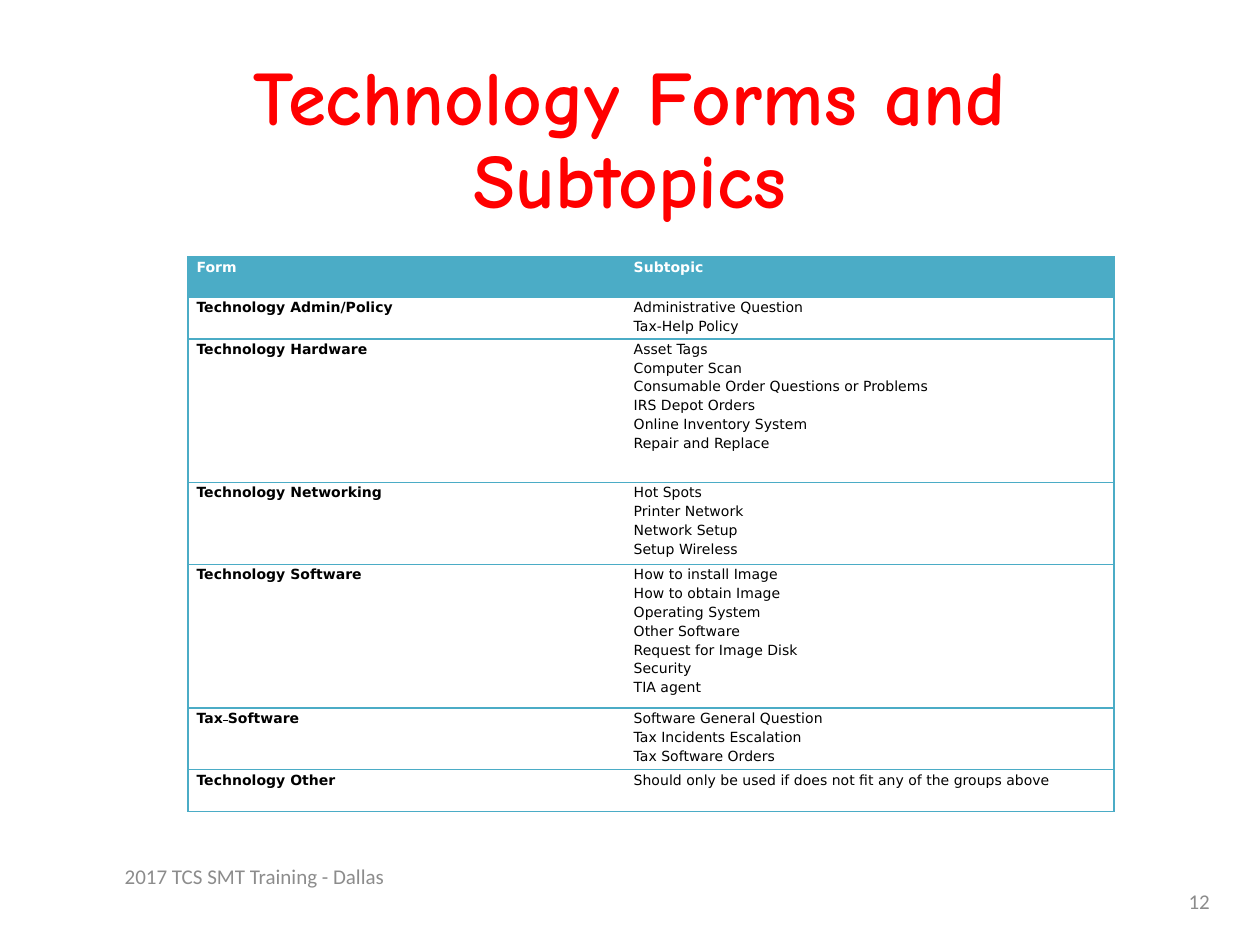
from lxml.etree import SubElement
from pptx import Presentation
from pptx.dml.color import RGBColor
from pptx.enum.text import MSO_ANCHOR, MSO_AUTO_SIZE, PP_ALIGN
from pptx.oxml.ns import qn
from pptx.util import Inches, Pt

THEME = {
    "accent": "4BACC6",
    "title": {"name": "Comic Neue", "size": Pt(44), "bold": True, "color": "FF0000"},
    "header": {"name": "DejaVu Sans", "size": Pt(8), "bold": True, "color": "FFFFFF"},
    "form": {"name": "DejaVu Sans", "size": Pt(8), "bold": True, "color": "000000"},
    "subtopic": {"name": "DejaVu Sans", "size": Pt(8), "bold": False, "color": "000000"},
    "footer": {"name": "Calibri", "size": Pt(12), "bold": False, "color": "8C8C8C"},
}
NO_STYLE_NO_GRID = "{2D5ABB26-0587-4C30-8999-92F81FD0307C}"

# Row height, form name in runs, subtopics
ROWS = [
    (0.32, ["Form"], ["Subtopic"]),
    (0.33, ["Technology Admin/Policy"], ["Administrative Question", "Tax-Help Policy"]),
    (1.14, ["Technology Hardware"],
     ["Asset Tags", "Computer Scan", "Consumable Order Questions or Problems",
      "IRS Depot Orders", "Online Inventory System", "Repair and Replace"]),
    (0.65, ["Technology Networking"],
     ["Hot Spots", "Printer Network", "Network Setup", "Setup Wireless"]),
    (1.14, ["Technology Software"],
     ["How to install Image", "How to obtain Image", "Operating System",
      "Other Software", "Request for Image Disk", "Security", "TIA agent"]),
    (0.49, ["Tax", " ", "Software"],
     ["Software General Question", "Tax Incidents Escalation", "Tax Software Orders"]),
    (0.33, ["Technology Other"],
     ["Should only be used if does not fit any of the groups above"]),
]


def add_run(paragraph, text, role):
    run = paragraph.add_run()
    run.text = text
    for key, value in THEME[role].items():
        if key == "color":
            run.font.color.rgb = RGBColor.from_string(value)
        else:
            setattr(run.font, key, value)
    return run


def add_border(cell, side):
    line = SubElement(cell._tc.get_or_add_tcPr(), qn(f"a:ln{side}"), w=str(Pt(1)))
    fill = SubElement(line, qn("a:solidFill"))
    SubElement(fill, qn("a:srgbClr"), val=THEME["accent"])


prs = Presentation()
prs.slide_width, prs.slide_height = Inches(10), Inches(7.5)
slide = prs.slides.add_slide(prs.slide_layouts[5])

# Title
title = slide.shapes.title
title.left, title.top = Inches(0.69), Inches(0.4)
title.width, title.height = Inches(8.62), Inches(1.45)
title_frame = title.text_frame
title_format = {
    "word_wrap": True, "auto_size": MSO_AUTO_SIZE.NONE,
    "vertical_anchor": MSO_ANCHOR.MIDDLE,
    "margin_left": Inches(0.05), "margin_right": Inches(0.05),
    "margin_top": Inches(0.05), "margin_bottom": Inches(0.05),
}
for key, value in title_format.items():
    setattr(title_frame, key, value)
heading = title_frame.paragraphs[0]
heading.alignment, heading.line_spacing = PP_ALIGN.CENTER, 0.9
add_run(heading, "Technology Forms and Subtopics", "title")

# Table of forms
forms = slide.shapes.add_table(len(ROWS), 2, Inches(1.49), Inches(2.04),
                               Inches(7.35), Inches(4.4)).table
forms._tbl.tblPr.find(qn("a:tableStyleId")).text = NO_STYLE_NO_GRID
forms.horz_banding = False
forms.columns[0].width, forms.columns[1].width = Inches(3.47), Inches(3.88)
cell_format = {"margin_left": Inches(0.07), "margin_right": Inches(0.07),
               "margin_top": 0, "margin_bottom": 0}

for row, (height, form, subtopics) in enumerate(ROWS):
    forms.rows[row].height = Inches(height)
    columns = [("form", "LTB", [form]),
               ("subtopic", "RTB", [[subtopic] for subtopic in subtopics])]
    for column, (role, sides, lines) in enumerate(columns):
        cell = forms.cell(row, column)
        for key, value in cell_format.items():
            setattr(cell, key, value)
        for side in sides:
            add_border(cell, side)
        if row == 0:
            role = "header"
            cell.fill.solid()
            cell.fill.fore_color.rgb = RGBColor.from_string(THEME["accent"])
        else:
            cell.fill.background()
        for index, parts in enumerate(lines):
            frame = cell.text_frame
            paragraph = frame.add_paragraph() if index else frame.paragraphs[0]
            paragraph.line_spacing = 1.15
            for part in parts:
                run = add_run(paragraph, part, role)
                if part == " ":  # struck-out gap in "Tax Software"
                    run._r.get_or_add_rPr().set("strike", "sngStrike")

# Footer and slide number
for text, left, top, width, alignment in [
    ("2017 TCS SMT Training - Dallas", 0.33, 6.75, 3.38, PP_ALIGN.CENTER),
    ("12", 9.06, 6.95, 0.64, PP_ALIGN.RIGHT),
]:
    footer = slide.shapes.add_textbox(Inches(left), Inches(top), Inches(width), Inches(0.4))
    footer.text_frame.word_wrap = True
    footer.text_frame.vertical_anchor = MSO_ANCHOR.MIDDLE
    footer_line = footer.text_frame.paragraphs[0]
    footer_line.alignment = alignment
    add_run(footer_line, text, "footer")

prs.save("out.pptx")
